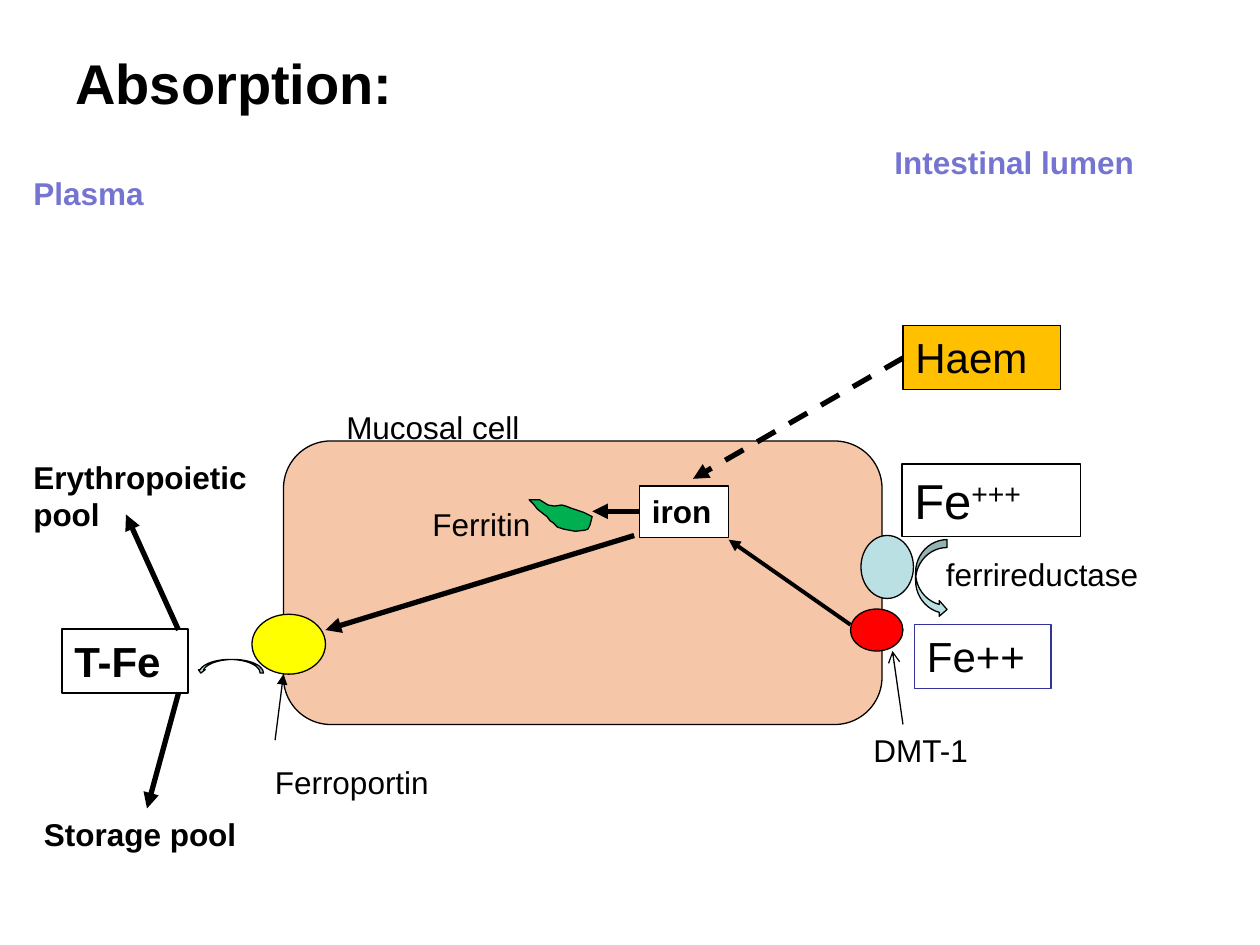
from pptx import Presentation, util as u
from pptx.dml.color import RGBColor
from pptx.enum import dml, shapes, text
from pptx.oxml import ns
from lxml import etree

THEME = dict(
    font="Arial", ink="000000", head="7575D1", cell="F6C6A8", white="FFFFFF",
    haem="FFC000", pale="BBE0E3", red="FF0000", yellow="FFFF00",
    green="00B050", navy="333399",
    title=32, large=28, mid=24, small=18, thin=0.75, firm=2.25, thick=3,
)
COLS, ROWS = 120, 90  # grid of the slide; all places below are in its cells
KIND = shapes.MSO_SHAPE

# kind, left, top, width, height, fill, turn
FORMS = [
    (KIND.ROUNDED_RECTANGLE, 27, 42, 57, 27, "cell", 0),
    (KIND.OVAL, 82, 51, 5, 6, "pale", 0),
    (KIND.OVAL, 81, 58, 5, 4, "red", 0),
    (KIND.OVAL, 24, 58.5, 7, 5.7, "yellow", 0),
    (KIND.CURVED_RIGHT_ARROW, 87.2, 51.4, 3, 7.4, "pale", 0),
    (KIND.CURVED_UP_ARROW, 18.8, 62.8, 6.3, 1.3, "pale", 180),
]

# words, left, top, width, height, size, bold, fill, line
BOXES = [
    ("iron", 60.9, 46.3, 8.5, 4.9, "small", True, "white", "ink"),
    ("T-Fe", 5.9, 59.9, 12, 6.1, "mid", True, None, "ink"),
    ("Fe^+++", 85.9, 44.2, 17, 6.9, "large", False, None, "ink"),
    ("Fe++", 87.1, 59.5, 13, 6.1, "mid", False, None, "navy"),
    ("Haem", 86, 31, 15, 6.1, "mid", False, "haem", "ink"),
]

# words, left, top, width, height, size, bold, colour
LABELS = [
    ("Absorption:", 6, 4, 108, 76.4, "title", True, "ink"),
    ("Intestinal lumen", 84, 13, 27, 4.8, "small", True, "head"),
    ("Plasma", 2, 16, 25, 4.8, "small", True, "head"),
    ("Erythropoietic pool", 2, 43, 23, 8.4, "small", True, "ink"),
    ("Storage pool", 3, 77, 21, 4.8, "small", True, "ink"),
    ("Mucosal cell", 31.8, 38.3, 19, 4.8, "small", False, "ink"),
    ("Ferritin", 40, 47.5, 16.4, 4.8, "small", False, "ink"),
    ("ferrireductase", 88.9, 52.3, 22.1, 4.8, "small", False, "ink"),
    ("DMT-1", 82, 69, 21, 4.8, "small", False, "ink"),
    ("Ferroportin", 25, 72.1, 23, 4.8, "small", False, "ink"),
]

# start, end, weight, head, dashed
ARROWS = [
    ((17, 60), (12, 49), "thick", "triangle", False),
    ((17, 66), (14, 77), "thick", "triangle", False),
    ((60.4, 51), (31, 60), "thick", "triangle", False),
    ((60.9, 48.7), (56.4, 48.7), "thick", "triangle", False),
    ((86, 34.1), (66, 45.6), "thick", "triangle", True),
    ((81, 59.5), (69.4, 51.4), "firm", "triangle", False),
    ((26.2, 70.5), (27, 64.2), "thin", "triangle", False),
    ((86, 69), (85, 62), "thin", "arrow", False),
]

# outline of the ferritin grain
GRAIN = [
    (50.4, 47.6), (50.8, 48), (51.2, 48.5), (51.7, 48.9), (52.1, 49.2),
    (52.4, 49.6), (52.7, 49.8), (53.1, 50.2), (53.7, 50.4), (54.8, 50.6),
    (55.7, 50.5), (56, 50.4), (56.2, 50), (56.4, 49.2), (56, 49),
    (55.6, 48.8), (54.7, 48.5), (54.4, 48.4), (53.9, 48.2), (53.5, 48.1),
    (52.8, 48.2), (52.2, 48.1), (51.4, 47.6),
]

deck = Presentation()
deck.slide_width, deck.slide_height = u.Inches(10), u.Inches(7.5)
slide = deck.slides.add_slide(deck.slide_layouts[6])
STEP = deck.slide_width // COLS


def emu(*cells):
    return [u.Emu(round(c * STEP)) for c in cells]


def tint(name):
    return RGBColor.from_string(THEME[name])


def paint(shape, fill, line="ink"):
    shape.shadow.inherit = False
    if fill:
        shape.fill.solid()
        shape.fill.fore_color.rgb = tint(fill)
    else:
        shape.fill.background()
    shape.line.color.rgb = tint(line)
    shape.line.width = u.Pt(THEME["thin"])


def write(shape, words, size, bold, colour="ink"):
    """Fill the shape with left-set text; what follows ^ is raised."""
    frame = shape.text_frame
    frame.word_wrap = True
    frame.vertical_anchor = text.MSO_ANCHOR.TOP
    para = frame.paragraphs[0]
    para.alignment = text.PP_ALIGN.LEFT
    for i, part in enumerate(words.split("^")):
        run = para.add_run()
        run.text = part
        font = run.font
        font.name, font.size, font.bold = THEME["font"], u.Pt(THEME[size]), bold
        font.color.rgb = tint(colour)
        if i:
            run.font._element.set("baseline", "30000")


def arrow(start, end, weight, head, dashed):
    line = slide.shapes.add_connector(
        shapes.MSO_CONNECTOR.STRAIGHT, *emu(*start, *end))
    line.line.color.rgb = tint("ink")
    line.line.width = u.Pt(THEME[weight])
    if dashed:
        line.line.dash_style = dml.MSO_LINE.DASH
    etree.SubElement(line.line._get_or_add_ln(), ns.qn("a:tailEnd"), type=head)
    etree.SubElement(line._element.spPr, ns.qn("a:effectLst"))


for kind, *place, fill, turn in FORMS:
    form = slide.shapes.add_shape(kind, *emu(*place))
    form.rotation = turn
    paint(form, fill)

pen = slide.shapes.build_freeform(*emu(*GRAIN[0]))
pen.add_line_segments([emu(*dot) for dot in GRAIN[1:]])
paint(pen.convert_to_shape(), "green")

for words, *place, size, bold, fill, line in BOXES:
    box = slide.shapes.add_shape(KIND.RECTANGLE, *emu(*place))
    paint(box, fill, line)
    write(box, words, size, bold)

for words, *place, size, bold, colour in LABELS:
    write(slide.shapes.add_textbox(*emu(*place)), words, size, bold, colour)

for row in ARROWS:
    arrow(*row)

deck.save("out.pptx")
